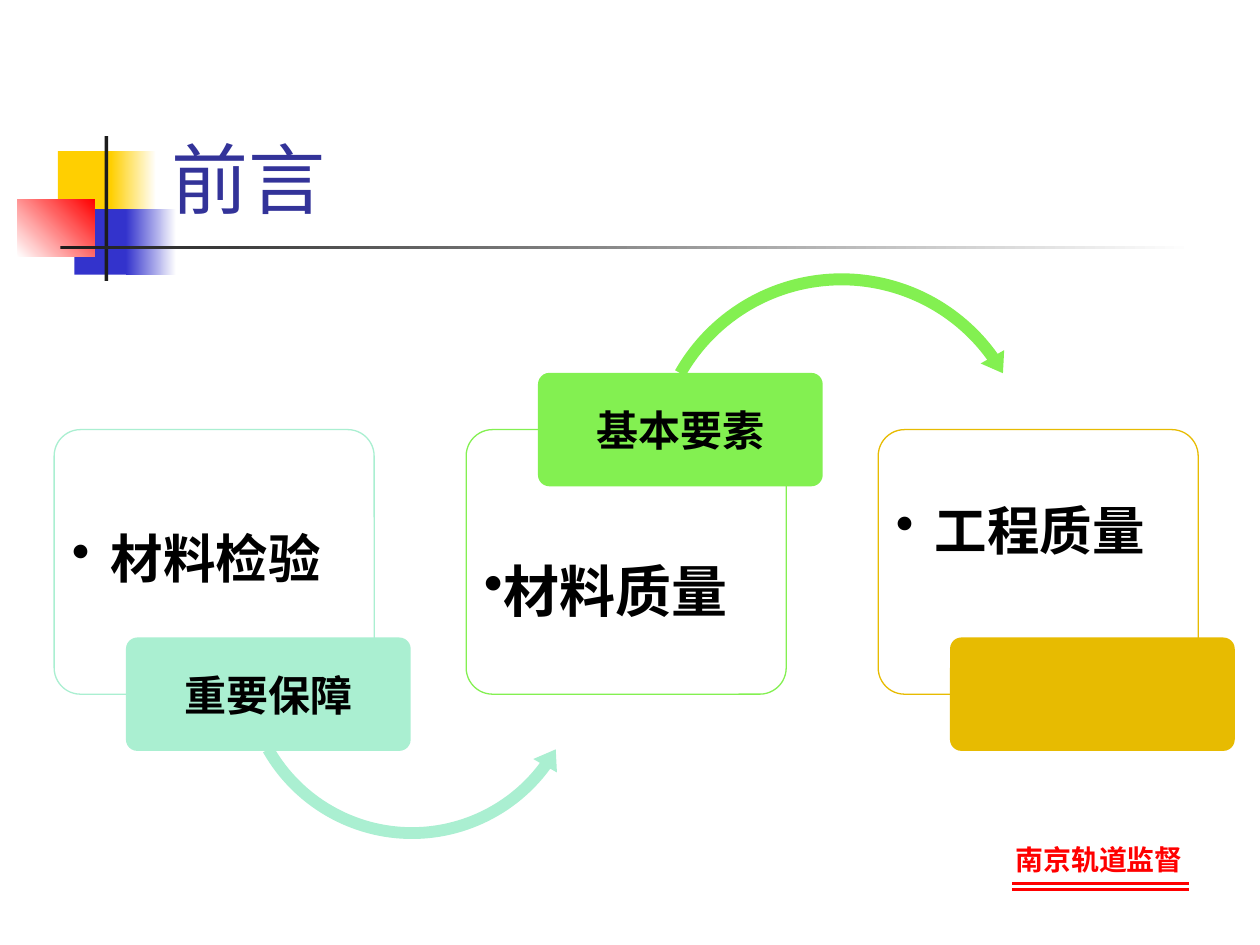
from lxml import etree
from pptx import Presentation
from pptx.dml.color import RGBColor
from pptx.enum.shapes import MSO_CONNECTOR, MSO_SHAPE as Shape
from pptx.enum.text import MSO_ANCHOR as Anchor, PP_ALIGN as Align
from pptx.oxml.ns import qn
from pptx.util import Inches, Pt

FONT = "Roboto"
COLORS = {
    "white": "FFFFFF", "black": "000000", "ink": "1C1C1C",
    "yellow": "FFCF01", "blue": "3333CC", "red": "FF0000", "title": "333399",
    "mint": "AAEFD1", "green": "83F051", "gold": "E7BB01",
}

# Steps of the process: left edge, three columns with equal pitch
FIRST_LEFT, PITCH = 0.43, 3.27
CARD_TOP, CARD_W, CARD_H = 3.41, 2.54, 2.1
LABEL_DX, LABEL_W, LABEL_H = 0.57, 2.26, 0.9
LABEL_LOW, LABEL_HIGH = 5.06, 2.96

STEPS = [
    dict(color="mint", text="材料检验", size=30, hang=0.31, text_top=3.63,
         label="重要保障", label_top=LABEL_LOW,
         arrow=(Shape.LEFT_CIRCULAR_ARROW, (1.85, 3.88, 2.84, 2.84),
                (0.033, 4.06, 21.815, 90.245, 0.038))),
    dict(color="green", text="材料质量", size=32, hang=0, text_top=3.86,
         label="基本要素", label_top=LABEL_HIGH,
         arrow=(Shape.CIRCULAR_ARROW, (5.1, 2.11, 3.16, 3.16),
                (0.03, 3.615, 194.63, 125.755, 0.034))),
    dict(color="gold", text="工程质量", size=30, hang=0.31, text_top=CARD_TOP,
         label=None, label_top=LABEL_LOW, arrow=None),
]


def rgb(name):
    return RGBColor.from_string(COLORS[name])


def inches(*lengths):
    return [Inches(length) for length in lengths]


def add_block(slide, box, fill, kind=Shape.RECTANGLE, adjust=(), outline=None):
    """Solid preset shape, with an outline only if a colour is given."""
    block = slide.shapes.add_shape(kind, *inches(*box))
    block.shadow.inherit = False
    block.fill.solid()
    block.fill.fore_color.rgb = rgb(fill)
    if outline:
        block.line.color.rgb = rgb(outline)
        block.line.width = Pt(0.75)
    else:
        block.line.fill.background()
    for i, value in enumerate(adjust):
        block.adjustments[i] = value
    return block


def add_fade(slide, box, start, end, angle=0):
    """Rectangle with a two-colour linear gradient."""
    fade = add_block(slide, box, start)
    fade.fill.gradient()
    fade.fill.gradient_angle = angle
    for stop, name in zip(fade.fill.gradient_stops, (start, end)):
        stop.color.rgb = rgb(name)


def set_alpha(shape, percent):
    color = shape.fill._xPr.find(qn("a:solidFill"))[0]
    etree.SubElement(color, qn("a:alpha"), val=str(percent * 1000))


def add_text(slide, box, text, size, color="black", bold=True, align=Align.LEFT,
             anchor=Anchor.TOP, margins=(0.1, 0.05), bullet=False, hang=0):
    frame = slide.shapes.add_textbox(*inches(*box)).text_frame
    frame.word_wrap = True
    frame.vertical_anchor = anchor
    frame.margin_left = frame.margin_right = Inches(margins[0])
    frame.margin_top = frame.margin_bottom = Inches(margins[1])
    paragraph = frame.paragraphs[0]
    paragraph.alignment = align
    if hang:
        paragraph.line_spacing = 0.9
        paragraph.space_after = Pt(size * 0.15)
    if bullet:
        properties = paragraph._p.get_or_add_pPr()
        properties.set("marL", str(Inches(hang)))
        properties.set("indent", str(-Inches(hang)))
        etree.SubElement(properties, qn("a:buChar"), char="•")
    run = paragraph.add_run()
    run.text = text
    run.font.name = FONT
    run.font.size = Pt(size)
    run.font.bold = bold
    run.font.color.rgb = rgb(color)


def add_rule(slide, left, right, y):
    rule = slide.shapes.add_connector(MSO_CONNECTOR.STRAIGHT, *inches(left, y, right, y))
    rule.line.color.rgb = rgb("red")
    rule.line.width = Pt(1.5)
    etree.SubElement(rule._element.spPr, qn("a:effectLst"))


def add_decoration(slide):
    add_block(slide, (0.46, 1.2, 0.48, 0.52), "yellow")
    add_fade(slide, (0.88, 1.2, 0.36, 0.52), "yellow", "white")
    add_block(slide, (0.59, 1.66, 0.46, 0.52), "blue")
    add_fade(slide, (1, 1.66, 0.4, 0.52), "blue", "white")
    add_fade(slide, (0.14, 1.58, 0.61, 0.46), "white", "red", angle=45)
    add_block(slide, (0.83, 1.08, 0.03, 1.15), "ink")
    add_fade(slide, (0.48, 1.95, 9, 0.03), "ink", "white")


def add_signature(slide):
    add_text(slide, (7.96, 6.64, 1.75, 0.37), "南京轨道监督", 16, color="red")
    for y in (7.01, 7.06):
        add_rule(slide, 8.03, 9.44, y)


def add_step(slide, left, step):
    # Card and its bullet
    card = add_block(slide, (left, CARD_TOP, CARD_W, CARD_H), "white",
                     Shape.ROUNDED_RECTANGLE, (0.1,), outline=step["color"])
    set_alpha(card, 90)
    add_text(slide, (left, step["text_top"], CARD_W, 1.65), step["text"], step["size"],
             anchor=Anchor.MIDDLE, margins=(0.14, 0.14), bullet=True, hang=step["hang"])
    # Arrow to the next card
    if step["arrow"]:
        kind, box, adjust = step["arrow"]
        add_block(slide, box, step["color"], kind, adjust)
    # Label overlapping the card
    label_box = (left + LABEL_DX, step["label_top"], LABEL_W, LABEL_H)
    add_block(slide, label_box, step["color"], Shape.ROUNDED_RECTANGLE, (0.1,))
    if step["label"]:
        add_text(slide, label_box, step["label"], 24, align=Align.CENTER,
                 anchor=Anchor.MIDDLE, margins=(0.05, 0.03))


def main():
    deck = Presentation()
    deck.slide_width, deck.slide_height = inches(10, 7.5)
    slide = deck.slides.add_slide(deck.slide_layouts[6])

    add_decoration(slide)
    add_signature(slide)
    add_text(slide, (1.26, 0.23, 8.52, 1.6), "前言", 44, color="title", bold=False,
             anchor=Anchor.BOTTOM)
    for i, step in enumerate(STEPS):
        add_step(slide, FIRST_LEFT + i * PITCH, step)

    deck.save("out.pptx")


if __name__ == "__main__":
    main()
